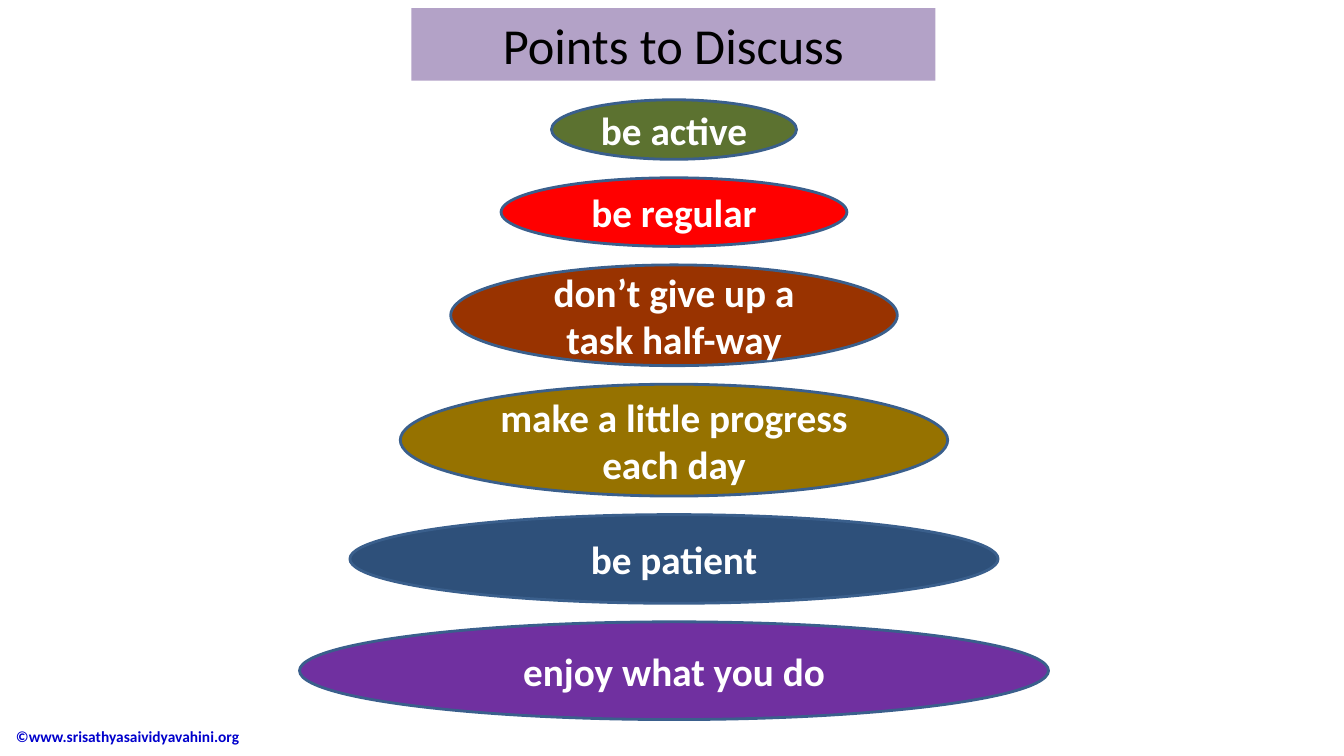
from dataclasses import dataclass

from pptx import Presentation
from pptx.dml.color import RGBColor
from pptx.enum.shapes import MSO_SHAPE
from pptx.enum.text import MSO_ANCHOR, MSO_AUTO_SIZE, PP_ALIGN
from pptx.util import Inches, Pt

OVAL = MSO_SHAPE.OVAL
MIDDLE = MSO_ANCHOR.MIDDLE
NO_AUTOFIT = MSO_AUTO_SIZE.NONE
CENTER = PP_ALIGN.CENTER
LEFT = PP_ALIGN.LEFT
TITLE_ONLY = 5


@dataclass(frozen=True)
class Theme:
    font: str = "Calibri"
    title_size: int = 36
    point_size: int = 28
    credit_size: int = 11
    outline_width: int = 2
    title_fill: str = "B3A2C7"
    title_text: str = "000000"
    point_text: str = "FFFFFF"
    outline: str = "3A5F8C"
    credit_text: str = "0000CC"


@dataclass(frozen=True)
class Box:
    left: float
    top: float
    width: float
    height: float

    def share(self, left, top, width, height):
        return Box(
            self.left + self.width * left / 100,
            self.top + self.height * top / 100,
            self.width * width / 100,
            self.height * height / 100,
        )

    def lengths(self):
        return [Inches(n) for n in (self.left, self.top, self.width, self.height)]


THEME = Theme()
PAGE = Box(0, 0, 13.33, 7.5)
FIRST_WIDTH = 18.23
WIDTH_STEP = 7.5
GAP = 2.45
POINTS = [
    ("be active", "5C7230", 7.87),
    ("be regular", "FF0000", 9.07),
    ("don’t give up a task half-way", "993300", 13.33),
    ("make a little progress each day", "967200", 14.8),
    ("be patient", "2E507A", 11.73),
    ("enjoy what you do", "7030A0", 12.93),
]


def write(shape, text, size, color, bold=False, align=CENTER):
    frame = shape.text_frame
    frame.word_wrap = True
    frame.auto_size = NO_AUTOFIT
    frame.vertical_anchor = MIDDLE
    para = frame.paragraphs[0]
    para.alignment = align
    span = para.add_run()
    span.text = text
    span.font.name = THEME.font
    span.font.size = Pt(size)
    span.font.bold = bold
    span.font.color.rgb = RGBColor.from_string(color)


def paint(shape, color):
    shape.fill.solid()
    shape.fill.fore_color.rgb = RGBColor.from_string(color)


def add_title(slide, box):
    title = slide.shapes.title
    title.left, title.top, title.width, title.height = box.lengths()
    paint(title, THEME.title_fill)
    write(title, "Points to Discuss", THEME.title_size, THEME.title_text)


def add_points(slide, box):
    top = 0
    for index, (text, color, height) in enumerate(POINTS):
        width = FIRST_WIDTH + index * WIDTH_STEP
        place = box.share((100 - width) / 2, top, width, height)
        oval = slide.shapes.add_shape(OVAL, *place.lengths())
        oval.shadow.inherit = False
        paint(oval, color)
        oval.line.color.rgb = RGBColor.from_string(THEME.outline)
        oval.line.width = Pt(THEME.outline_width)
        write(oval, text, THEME.point_size, THEME.point_text, bold=True)
        top += height + GAP


def add_credit(slide, box):
    credit = slide.shapes.add_textbox(*box.lengths())
    write(credit, "©www.srisathyasaividyavahini.org", THEME.credit_size,
          THEME.credit_text, bold=True, align=LEFT)


def main():
    deck = Presentation()
    deck.slide_width = Inches(PAGE.width)
    deck.slide_height = Inches(PAGE.height)
    slide = deck.slides.add_slide(deck.slide_layouts[TITLE_ONLY])
    add_credit(slide, PAGE.share(0.45, 94.67, 26.5, 5.33))
    add_title(slide, PAGE.share(30.6, 1.07, 39, 9.6))
    add_points(slide, PAGE.share(0.15, 13.2, 100, 100))
    deck.save("out.pptx")


if __name__ == "__main__":
    main()
